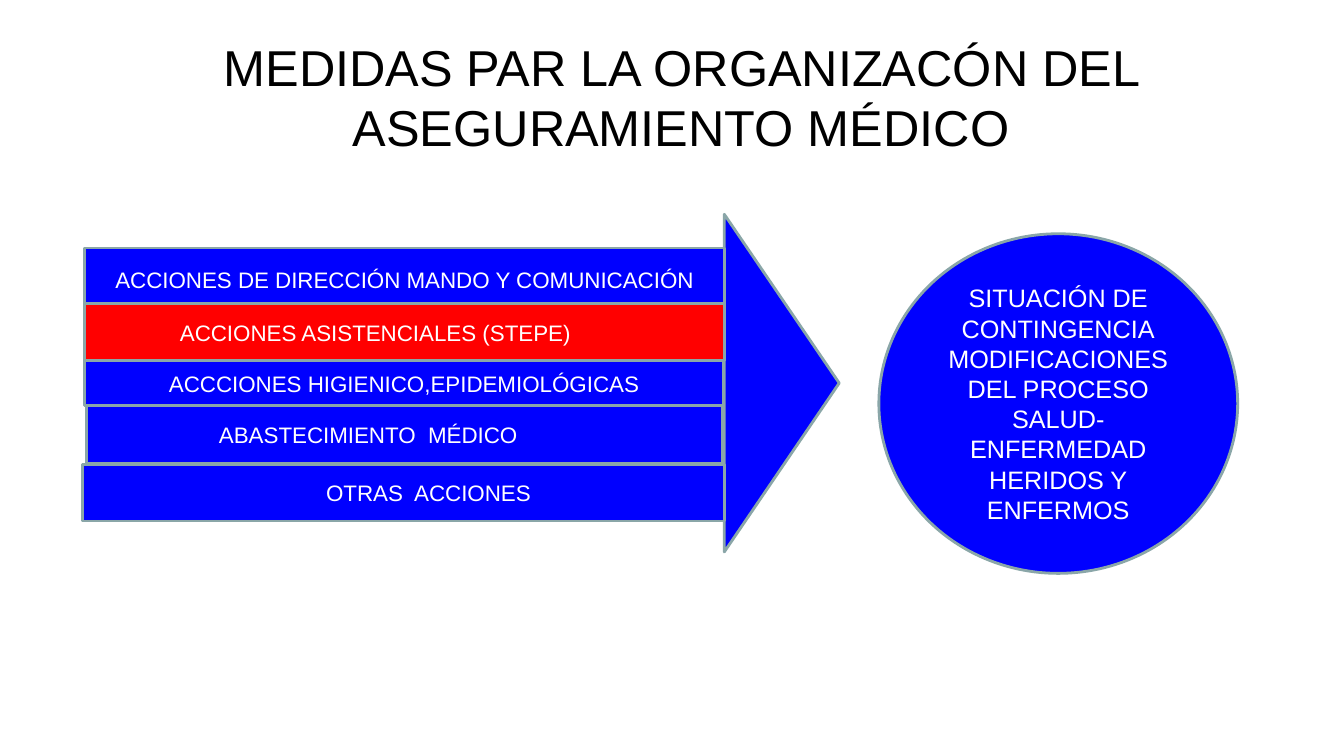
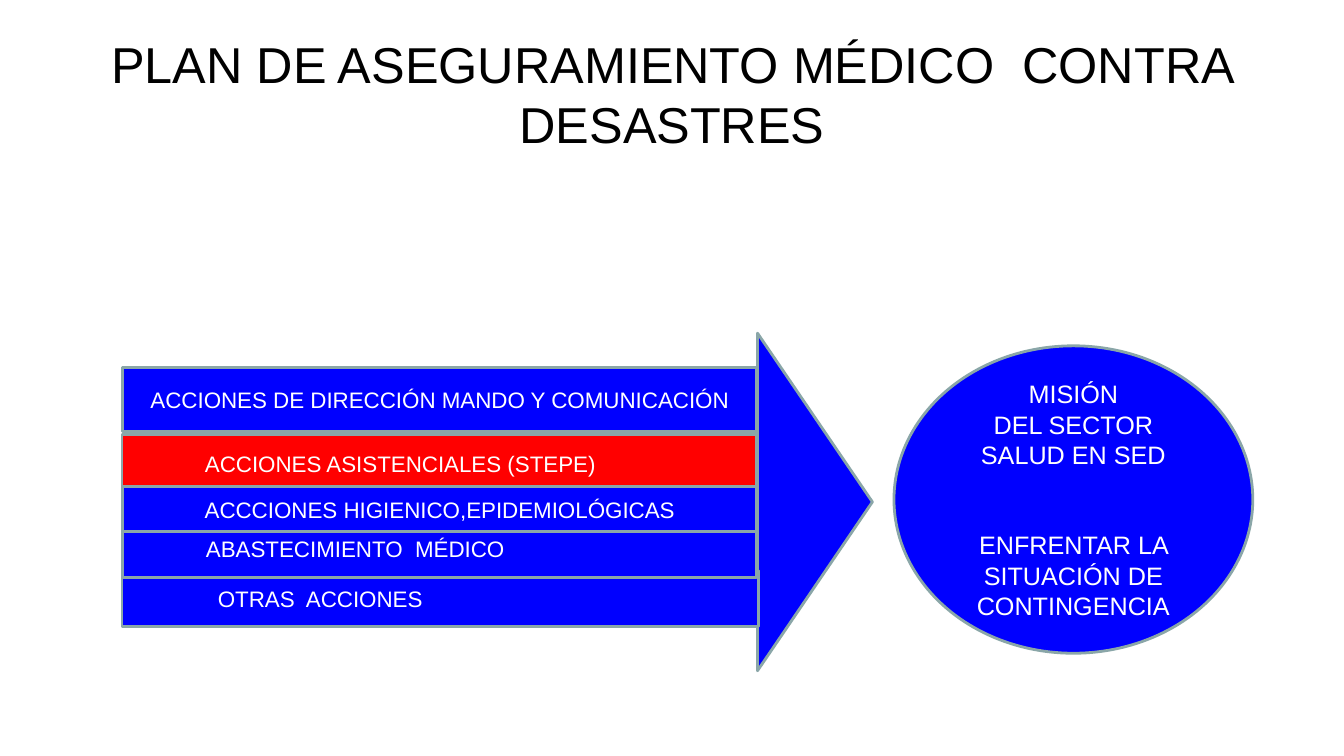
from pptx import Presentation
from pptx.dml.color import RGBColor
from pptx.enum import shapes, text
from pptx.util import Pt

BLUE, RED, EDGE = "0000FF", "FF0000", "8AA6A8"
WHITE, BLACK = "FFFFFF", "000000"
FORM = shapes.MSO_SHAPE
MID = text.PP_ALIGN.CENTER

# Bars from back to front: wording, height, fill
BARS = [
    ("ACCIONES DE DIRECCIÓN MANDO Y COMUNICACIÓN", 45.4, BLUE),
    ("ACCIONES ASISTENCIALES (STEPE)", 41, RED),
    ("OTRAS  ACCIONES", 40.3, BLUE),
    ("ABASTECIMIENTO  MÉDICO", 41.8, BLUE),
    ("ACCCIONES HIGIENICO,EPIDEMIOLÓGICAS", 31.7, BLUE),
]

# Each bar: left, top, width, left inset (None means centred)
# gap: index of the goal line that is set apart, and the space before it
SLIDES = [
    dict(title="MEDIDAS PAR LA ORGANIZACÓN DEL ASEGURAMIENTO MÉDICO",
         head=(54.7, 23.8), tip=(437.8, 232.6),
         oval=(627.8, 167, 256.3, 242.6),
         goal=["SITUACIÓN DE CONTINGENCIA",
               "MODIFICACIONES DEL PROCESO SALUD-ENFERMEDAD",
               "HERIDOS Y", "ENFERMOS"],
         gap=None,
         bars=[(60.5, 177.1, 457.2, None), (60.5, 216.7, 457.2, 68),
               (59, 331.9, 458.6, 174), (61.9, 289.4, 454.3, 94.5),
               (60.5, 257.8, 456.5, None)]),
    dict(title="PLAN DE ASEGURAMIENTO MÉDICO  CONTRA DESASTRES",
         head=(48.2, 21.6), tip=(461.5, 317.5),
         oval=(638.6, 247, 256.3, 219.6),
         goal=["MISIÓN", "DEL SECTOR SALUD EN SED",
               "ENFRENTAR LA SITUACIÓN DE CONTINGENCIA"],
         gap=(2, 43),
         bars=[(87.8, 262.8, 452.9, None), (87.1, 310.3, 453.6, 59.3),
               (87.1, 407.5, 455, 68.5), (87.8, 370.8, 452.9, 59.3),
               (87.8, 347.8, 452.9, None)]),
]


def write(box, lines, size, color, align=MID):
    frame = box.text_frame
    frame.word_wrap = True
    frame.vertical_anchor = text.MSO_ANCHOR.MIDDLE
    frame.text = "\n".join(lines)
    for para in frame.paragraphs:
        para.alignment = align
        for run in para.runs:
            run.font.name = "Arial"
            run.font.size = Pt(size)
            run.font.color.rgb = RGBColor.from_string(color)
    return frame


def draw(slide, form, left, top, width, height, fill=BLUE):
    shape = slide.shapes.add_shape(form, Pt(left), Pt(top), Pt(width), Pt(height))
    shape.shadow.inherit = False
    shape.fill.solid()
    shape.fill.fore_color.rgb = RGBColor.from_string(fill)
    shape.line.color.rgb = RGBColor.from_string(EDGE)
    shape.line.width = Pt(2)
    return shape


deck = Presentation()
deck.slide_width, deck.slide_height = Pt(960), Pt(540)

for page in SLIDES:
    slide = deck.slides.add_slide(deck.slide_layouts[6])

    # Title
    left, top = page["head"]
    title = slide.shapes.add_textbox(Pt(left), Pt(top), Pt(864), Pt(90))
    write(title, [page["title"]], 36, BLACK)

    # Goal
    oval = draw(slide, FORM.OVAL, *page["oval"])
    frame = write(oval, page["goal"], 18, WHITE)
    if page["gap"]:
        index, space = page["gap"]
        frame.paragraphs[index].space_before = Pt(space)

    # Arrow tip
    tip = draw(slide, FORM.ISOSCELES_TRIANGLE, *page["tip"], 241.2, 82.1)
    tip.rotation = 90

    # Action bars
    for (label, height, fill), (left, top, width, inset) in zip(BARS, page["bars"]):
        bar = draw(slide, FORM.RECTANGLE, left, top, width, height, fill)
        align = MID if inset is None else text.PP_ALIGN.LEFT
        frame = write(bar, [label], 16, WHITE, align)
        if inset is not None:
            frame.margin_left = Pt(inset)

deck.save("out.pptx")
